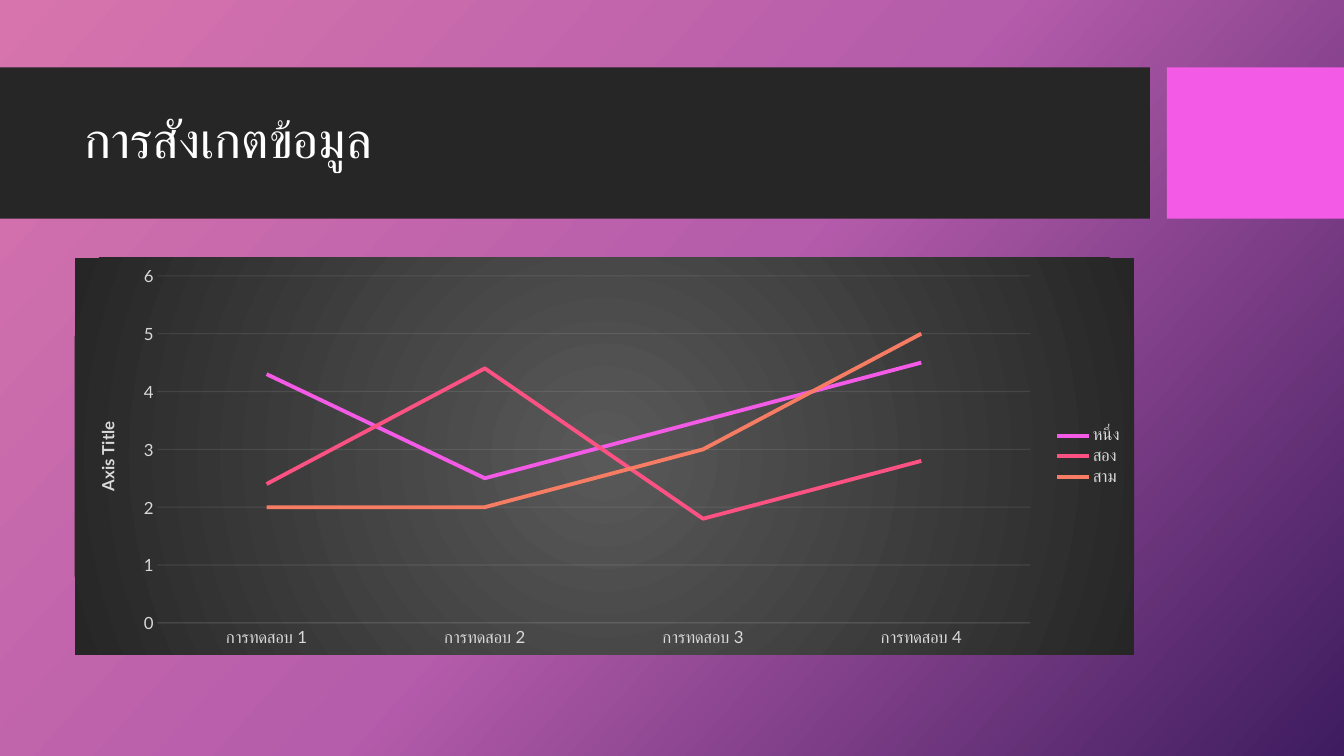
"""Build a slide with a title band and a line chart of three test series."""
from pptx import Presentation
from pptx.chart.data import CategoryChartData as Data
from pptx.dml.color import RGBColor as Rgb
from pptx.enum.chart import XL_CHART_TYPE as Kind, XL_LEGEND_POSITION as Side
from pptx.enum.chart import XL_TICK_MARK as Tick
from pptx.enum.shapes import MSO_SHAPE as Shape
from pptx.enum.text import MSO_ANCHOR as Anchor, MSO_AUTO_SIZE as Fit, PP_ALIGN as Align
from pptx.oxml import parse_xml
from pptx.oxml.ns import nsdecls, qn
from pptx.util import Cm, Pt

TITLE = "การสังเกตข้อมูล"
AXIS = "Axis Title"
CATS = [f"การทดสอบ {n}" for n in range(1, 5)]
SERIES = [
    ("หนึ่ง", (4.3, 2.5, 3.5, 4.5), "F35AE6"),
    ("สอง", (2.4, 4.4, 1.8, 2.8), "FC5283"),
    ("สาม", (2, 2, 3, 5), "F67C64"),
]
FONT = "Lato"
WHITE, PALE, GRID, DARK, PINK = "FFFFFF", "D9D9D9", "F2F2F2", "262626", "F35AE6"
BACK = [(0, "D774AD"), (50, "B55CAB"), (100, "3E1C5F")]
GLOW = [(0, "595959"), (100, DARK)]
LINEAR = '<a:lin ang="2520000" scaled="0"/>'
RADIAL = ('<a:path path="circle"><a:fillToRect l="50000" t="50000" '
          'r="50000" b="50000"/></a:path>')

WIDE, HIGH = 33.87, 19.05
LEFT, INNER = 1.88, 26.7
TOP, BAND, SPLIT, GAP = 1.7, 3.81, 28.98, 0.43


def color(code):
    return Rgb.from_string(code)


def style(font, size=12, tint=PALE, bold=False):
    font.name, font.size, font.bold = FONT, Pt(size), bold
    font.color.rgb = color(tint)


def write(frame, text, align=None, space=None, **look):
    frame.text = text
    para = frame.paragraphs[0]
    para.alignment, para.line_spacing = align, space
    style(para.runs[0].font, **look)


def blend(stops, shade):
    marks = "".join(f'<a:gs pos="{pos * 1000}"><a:srgbClr val="{code}"/></a:gs>'
                    for pos, code in stops)
    return parse_xml(f'<a:gradFill {nsdecls("a")} rotWithShape="1">'
                     f'<a:gsLst>{marks}</a:gsLst>{shade}</a:gradFill>')


def block(slide, left, width, tint):
    box = slide.shapes.add_shape(Shape.RECTANGLE, Cm(left), Cm(TOP), Cm(width), Cm(BAND))
    box.shadow.inherit = False
    box.fill.solid()
    box.fill.fore_color.rgb = color(tint)
    box.line.fill.background()
    return box


def rule(line, tint, width):
    line.color.rgb = color(tint)
    line.width = Pt(width)


def plot(slide):
    data = Data()
    data.categories = CATS
    for name, vals, _ in SERIES:
        data.add_series(name, vals)
    chart = slide.shapes.add_chart(Kind.LINE, Cm(LEFT), Cm(6.5), Cm(INNER), Cm(10), data).chart
    style(chart.font, 10, WHITE)
    chart.has_title = False
    chart.has_legend = True
    chart.legend.position = Side.RIGHT
    chart.legend.include_in_layout = False
    style(chart.legend.font)

    cat, val = chart.category_axis, chart.value_axis
    for axis in (cat, val):
        axis.major_tick_mark = axis.minor_tick_mark = Tick.NONE
        style(axis.tick_labels.font)
    val.minimum_scale, val.maximum_scale, val.major_unit = 0, 6, 1
    val.format.line.fill.background()
    for line in (cat.format.line, val.major_gridlines.format.line):
        rule(line, GRID, 0.75)
    write(val.axis_title.text_frame, AXIS, bold=True)

    chart.plots[0].vary_by_categories = False
    for row, (_, _, tint) in zip(chart.plots[0].series, SERIES):
        row.smooth = False
        rule(row.format.line, tint, 2.75)

    root = chart.element
    for body in root.xpath(".//c:valAx/c:title//a:bodyPr"):
        body.set("rot", "-5400000")
        body.set("vert", "horz")
    for mark in root.xpath(f'.//a:srgbClr[@val="{GRID}"]'):
        mark.append(parse_xml(f'<a:alpha {nsdecls("a")} val="10000"/>'))
    panel = parse_xml(f'<c:spPr {nsdecls("c", "a")}><a:ln><a:noFill/></a:ln></c:spPr>')
    panel.insert(0, blend(GLOW, RADIAL))
    root.find(qn("c:chart")).addnext(panel)


def main():
    deck = Presentation()
    deck.slide_width, deck.slide_height = Cm(WIDE), Cm(HIGH)
    slide = deck.slides.add_slide(deck.slide_layouts[5])
    slide.background.fill.solid()
    solid = slide.element.xpath(".//p:bgPr/a:solidFill")[0]
    solid.getparent().replace(solid, blend(BACK, LINEAR))

    title = slide.shapes.title
    right = SPLIT + GAP
    bars = [block(slide, 0, SPLIT, DARK), block(slide, right, WIDE - right, PINK)]
    for bar in bars:
        title.element.addprevious(bar.element)
    title.left, title.top, title.width, title.height = Cm(LEFT), Cm(2.08), Cm(INNER), Cm(3)
    frame = title.text_frame
    frame.auto_size, frame.word_wrap = Fit.NONE, True
    frame.vertical_anchor = Anchor.MIDDLE
    write(frame, TITLE, Align.LEFT, 0.9, size=36, tint=WHITE)
    plot(slide)
    deck.save("out.pptx")


if __name__ == "__main__":
    main()
